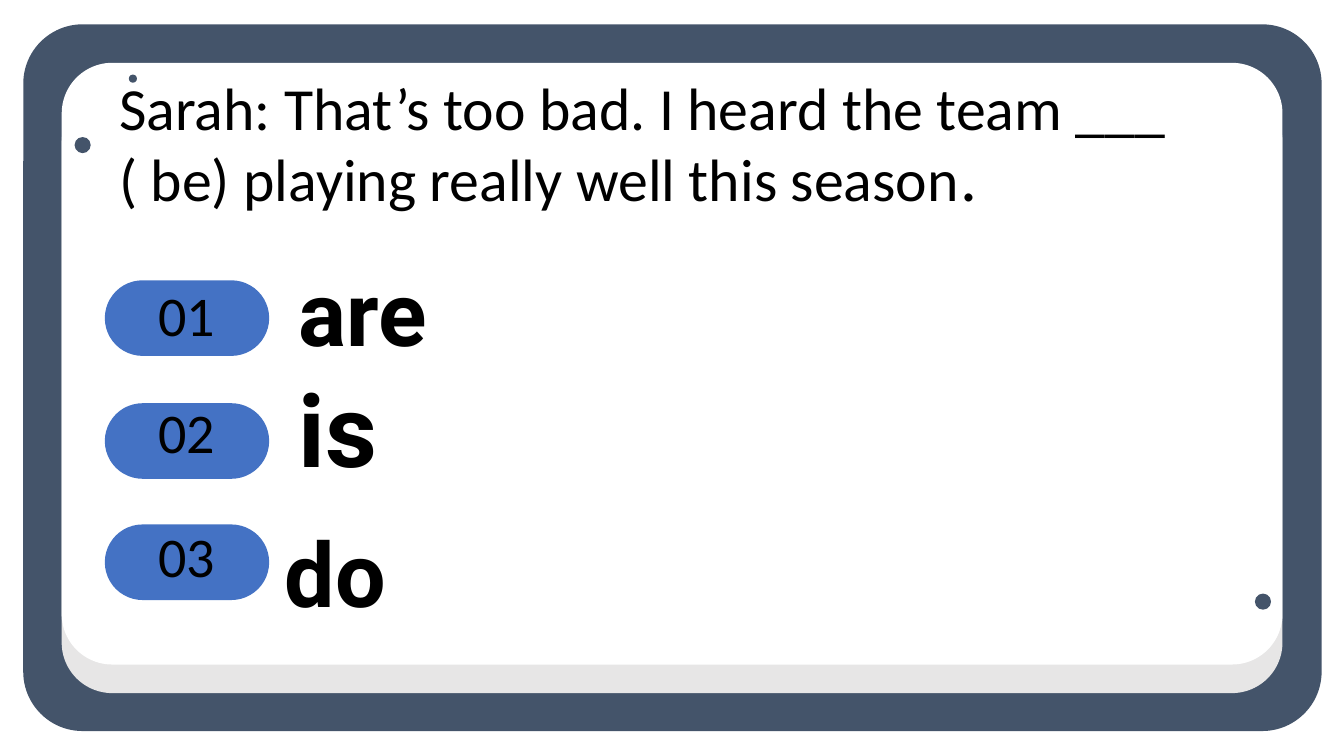
"""Build a grammar quiz slide with one question and three numbered answers."""
import pptx
import pptx.util
import pptx.dml.color
import pptx.enum.shapes
import pptx.enum.text

Pt = pptx.util.Pt
SHAPE = pptx.enum.shapes.MSO_SHAPE
ALIGN = pptx.enum.text.PP_ALIGN
ANCHOR = pptx.enum.text.MSO_ANCHOR
SLATE, BLUE, GREY, WHITE, BLACK = "44546A", "4472C4", "E7E6E6", "FFFFFF", "000000"


def add_filled(preset, left, top, width, height, color, corner=None):
    shape = slide.shapes.add_shape(preset, Pt(left), Pt(top), Pt(width), Pt(height))
    shape.shadow.inherit = False
    shape.fill.solid()
    shape.fill.fore_color.rgb = pptx.dml.color.RGBColor.from_string(color)
    shape.line.fill.background()
    if corner is not None:
        shape.adjustments[0] = corner


def add_text(text, left, top, width, height, font, size, anchor, align=ALIGN.LEFT, bold=False):
    box = slide.shapes.add_textbox(Pt(left), Pt(top), Pt(width), Pt(height))
    frame = box.text_frame
    frame.word_wrap = True
    frame.auto_size = pptx.enum.text.MSO_AUTO_SIZE.NONE
    frame.vertical_anchor = anchor
    frame.margin_left = frame.margin_right = Pt(9.6)
    frame.margin_top = frame.margin_bottom = Pt(9.6)
    paragraph = frame.paragraphs[0]
    paragraph.text = text
    paragraph.alignment = align
    paragraph.line_spacing = 0.9
    paragraph.font.name = font
    paragraph.font.size = Pt(size)
    paragraph.font.bold = bold
    paragraph.font.color.rgb = pptx.dml.color.RGBColor.from_string(BLACK)
    return paragraph


presentation = pptx.Presentation()
presentation.slide_width = Pt(960)
presentation.slide_height = Pt(540)
slide = presentation.slides.add_slide(presentation.slide_layouts[6])

add_filled(SHAPE.ROUNDED_RECTANGLE, 16.6, 17.4, 927.4, 504.8, SLATE, 0.084)
for panel_top, panel_color in ((65.3, GREY), (44.9, WHITE)):
    add_filled(SHAPE.ROUNDED_RECTANGLE, 44.1, panel_top, 872, 429.8, panel_color, 0.084)

for dot_left, dot_top, diameter in ((53.3, 97.9, 11.5), (896.4, 424, 11.5), (92, 53.3, 5.8)):
    add_filled(SHAPE.OVAL, dot_left, dot_top, diameter, diameter, SLATE)

question = add_text(
    "Sarah: That’s too bad. I heard the team ___ ( be) playing really well this season",
    75.6, 46.8, 841, 128.2, "Calibri", 42.7, ANCHOR.TOP)
full_stop = question.add_run()
full_stop.text = "."
full_stop.font.size = Pt(48)

answers = [
    ("are", 200.2, 208.1, 203.8, 216.7, 552.2, 54, 64),
    ("is", 288, 291.6, 203.8, 301.7, 632.2, 57.6, 72),
    ("do", 374.6, 380.2, 193.7, 414.7, 655.9, 42.5, 64),
]
for number, (answer, pill_top, number_top, left, top, width, height, size) in enumerate(answers, 1):
    add_filled(SHAPE.ROUNDED_RECTANGLE, 74.9, pill_top, 117.4, 54, BLUE, 0.5)
    add_text(f"{number:02d}", 74.9, number_top, 117.4, 38.9, "Calibri", 40,
             ANCHOR.MIDDLE, ALIGN.CENTER)
    add_text(answer, left, top, width, height, "Roboto", size, ANCHOR.BOTTOM, bold=True)

presentation.save("out.pptx")
